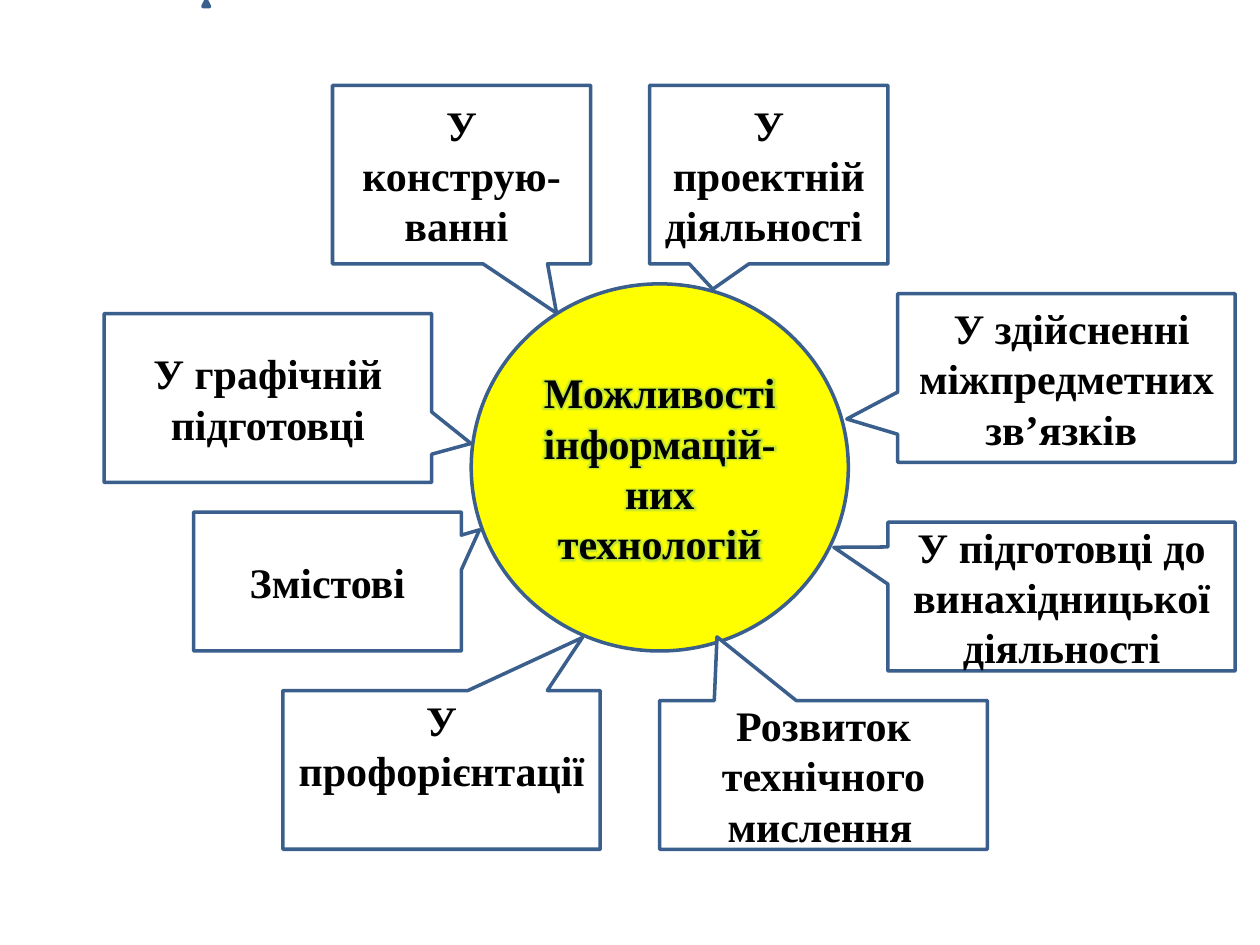
from lxml import etree
from pptx import Presentation
from pptx.dml.color import RGBColor
from pptx.enum import shapes, text
from pptx.oxml import ns
from pptx.util import Pt

BLACK = RGBColor(0x00, 0x00, 0x00)
WHITE = RGBColor(0xFF, 0xFF, 0xFF)
YELLOW = RGBColor(0xFF, 0xFF, 0x00)
BLUE = RGBColor(0x4F, 0x81, 0xBD)
EDGE = RGBColor(0x3A, 0x5F, 0x8C)
GLOW = RGBColor(0x92, 0xD0, 0x50)

KIND = shapes.MSO_SHAPE
NBSP = chr(160)


class Board:
    """Holds the style and the current slide."""

    font, size, width = "Times New Roman", 24, 2

    def __init__(self, slide):
        self.slide = slide

    def shape(self, kind, box, fill):
        item = self.slide.shapes.add_shape(kind, *map(Pt, box))
        item.shadow.inherit = False
        item.fill.solid()
        item.fill.fore_color.rgb = fill
        item.line.color.rgb = EDGE
        item.line.width = Pt(self.width)
        return item

    def label(self, item, words, color=BLACK, font=None, size=None, bold=True):
        """Add one run to the centred paragraph of a shape."""
        frame = item.text_frame
        frame.word_wrap = True
        frame.vertical_anchor = text.MSO_ANCHOR.MIDDLE
        para = frame.paragraphs[0]
        para.alignment = text.PP_ALIGN.CENTER
        run = para.add_run()
        run.text = words
        run.font.name = font or self.font
        run.font.size = Pt(size or self.size)
        run.font.bold = bold
        run.font.color.rgb = color
        return run

    def glow(self, run):
        """Give a run a thin black outline and a soft green glow."""
        space = ns.nsdecls("a")
        fill = run.font._element.find(ns.qn("a:solidFill"))
        fill.addprevious(etree.fromstring(
            f'<a:ln {space} w="{Pt(0.75)}"><a:solidFill>'
            f'<a:srgbClr val="{BLACK}"/></a:solidFill></a:ln>'))
        fill.addnext(etree.fromstring(
            f'<a:effectLst {space}><a:glow rad="{Pt(5)}">'
            f'<a:srgbClr val="{GLOW}"><a:alpha val="60000"/></a:srgbClr>'
            f'</a:glow></a:effectLst>'))

    def hub(self, box, words):
        item = self.shape(KIND.OVAL, box, YELLOW)
        self.glow(self.label(item, words))

    def callout(self, box, tip, words):
        item = self.shape(KIND.RECTANGULAR_CALLOUT, box, WHITE)
        item.adjustments[0], item.adjustments[1] = tip
        if words:
            self.label(item, words)
        return item


deck = Presentation()
deck.slide_width, deck.slide_height = Pt(720), Pt(540)
board = Board(deck.slides.add_slide(deck.slide_layouts[6]))

# Small mark at the top edge
board.shape(KIND.ISOSCELES_TRIANGLE, (116, 0, 3.75, 3.75), BLUE)

# Centre
board.hub((269.3, 162.2, 215.5, 209.8), "Можливості інформацій-них технологій")

# Callouts: box, tip as a share of the box, words
TOP = [
    ((190, 48.8, 147.5, 102), (0.368, 0.776), "У конструю-ванні" + NBSP),
    ((371.2, 48.8, 136.2, 102), (-0.235, 0.642),
     "У проектній діяльності" + NBSP),
    ((59.5, 179.2, 187.2, 96.4), (0.62, 0.27), "У графічній підготовці"),
]
LOW = [
    ((110.6, 292.6, 153, 79.4), (0.568, -0.372), "Змістові"),
    ((161.6, 394.6, 181.4, 90.7), (0.444, -0.834),
     "У профорієнтації" + NBSP),
]
for spot in TOP:
    board.callout(*spot)

# The spaced heading starts with a white run
link = board.callout((513, 167.8, 192.8, 96.4), (-0.651, 0.243), "")
board.label(link, NBSP, WHITE)
board.label(link, "У здійсненні міжпредметних зв’язків" + NBSP)

for spot in LOW:
    board.callout(*spot)

# The last run here has its own font
mind = board.callout((377, 400.3, 187.2, 85), (-0.325, -0.928),
                     "Розвиток технічного мислення")
board.label(mind, NBSP, font="Calibri", size=18, bold=False)

board.callout((507.4, 298.4, 198.4, 85), (-0.656, -0.331),
              "У підготовці до винахідницької діяльності")

deck.save("out.pptx")
